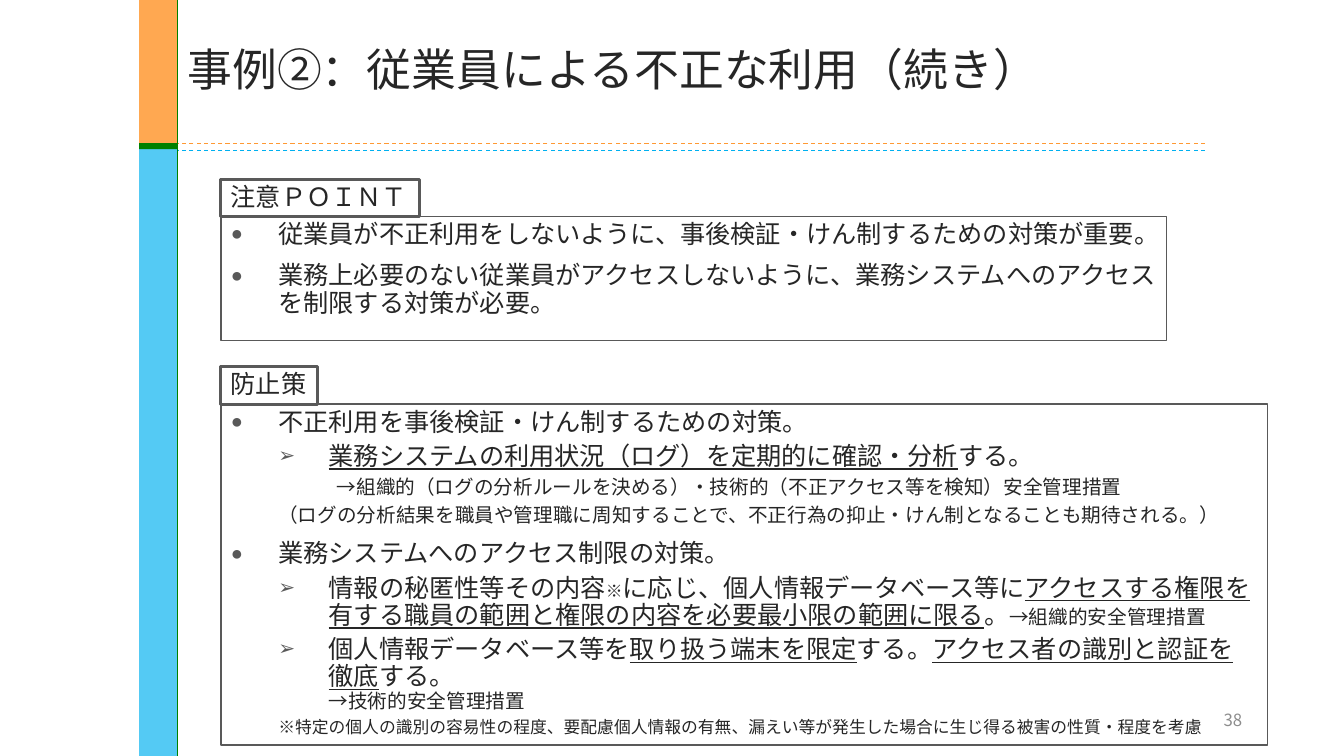
"""Builds the slide on preventing misuse of data by employees."""
from dataclasses import dataclass

from lxml.etree import SubElement
from pptx import Presentation
from pptx.dml.color import RGBColor
from pptx.enum.dml import MSO_LINE
from pptx.enum.shapes import MSO_CONNECTOR, MSO_SHAPE
from pptx.enum.text import MSO_ANCHOR, MSO_AUTO_SIZE, PP_ALIGN
from pptx.oxml.ns import qn
from pptx.util import Pt

PX = 9144
FONT = "Noto Sans CJK JP"
INK = RGBColor(0x26, 0x26, 0x26)
GREY = RGBColor(0x59, 0x59, 0x59)
PALE = RGBColor(0x8C, 0x8C, 0x8C)
BLUE = RGBColor(0x00, 0xB0, 0xF0)
ORANGE = RGBColor(0xFF, 0x99, 0x33)
GREEN = RGBColor(0x00, 0x80, 0x00)


@dataclass(frozen=True)
class Box:
    left: int
    top: int
    width: int
    height: int

    def emu(self) -> tuple:
        return tuple(v * PX for v in (self.left, self.top, self.width, self.height))


@dataclass(frozen=True)
class Bar:
    box: Box
    color: RGBColor
    opacity: int = 100


@dataclass(frozen=True)
class Rule:
    start: tuple
    end: tuple
    color: RGBColor
    width: float
    dash: bool = False


@dataclass(frozen=True)
class Span:
    text: str
    size: int = 18
    underline: bool = False
    new_line: bool = False


@dataclass(frozen=True)
class Item:
    spans: tuple
    level: int = 0
    bullet: str = ""
    margin: int = 47


@dataclass(frozen=True)
class Section:
    label: str
    label_box: Box
    body_box: Box
    items: tuple


def point(*spans: Span) -> Item:
    return Item(spans, 0, "●")


def measure(*spans: Span) -> Item:
    return Item(spans, 1, "➢", 97)


def note(text: str, size: int, margin: int = 47) -> Item:
    return Item((Span(text, size),), 1, "", margin)


BARS = (
    Bar(Box(138, 147, 38, 603), BLUE, 67),
    Bar(Box(138, 0, 38, 147), ORANGE, 85),
    Bar(Box(138, 142, 38, 6), GREEN),
)
RULES = (
    Rule((1195, 142), (176, 142), ORANGE, 0.75, True),
    Rule((1195, 149), (176, 149), BLUE, 0.75, True),
    Rule((176, 0), (176, 750), GREEN, 1),
)
SECTIONS = (
    Section("注意ＰＯＩＮＴ", Box(219, 178, 197, 37), Box(219, 215, 938, 123), (
        point(Span("従業員が不正利用をしないように、事後検証・けん制するための対策が重要。")),
        point(Span("業務上必要のない従業員がアクセスしないように、業務システムへのアクセスを制限する対策が必要。")),
    )),
    Section("防止策", Box(219, 364, 96, 37), Box(219, 401, 1038, 338), (
        point(Span("不正利用を事後検証・けん制するための対策。")),
        measure(Span("業務システムの利用状況（ログ）を定期的に確認・分析", underline=True),
                Span("する。")),
        note("→組織的（ログの分析ルールを決める）・技術的（不正アクセス等を検知）安全管理措置", 14, 105),
        note("（ログの分析結果を職員や管理職に周知することで、不正行為の抑止・けん制となることも期待される。）", 14),
        point(Span("業務システムへのアクセス制限の対策。")),
        measure(Span("情報の秘匿性等その内容"), Span("※", 12),
                Span("に応じ、個人情報データベース等に"),
                Span("アクセスする権限を有する職員の範囲と権限の内容を必要最小限の範囲に限る", underline=True),
                Span("。"), Span("→組織的安全管理措置", 14)),
        measure(Span("個人情報データベース等を"), Span("取り扱う端末を限定", underline=True),
                Span("する。"), Span("アクセス者の識別と認証を徹底", underline=True),
                Span("する。"), Span("→技術的安全管理措置", 14, new_line=True)),
        note("※特定の個人の識別の容易性の程度、要配慮個人情報の有無、漏えい等が発生した場合に生じ得る被害の性質・程度を考慮", 12),
    )),
)


def style_run(r, size: int, color: RGBColor = INK) -> None:
    r.font.size = Pt(size)
    r.font.name = FONT
    r.font.color.rgb = color
    SubElement(r.font._element, qn("a:ea"), typeface=FONT)


def place(sp, box: Box) -> None:
    sp.left, sp.top, sp.width, sp.height = box.emu()


def write_line(sp, text: str, size: int, color: RGBColor = INK):
    tf = sp.text_frame
    tf.text = text
    tf.vertical_anchor = MSO_ANCHOR.MIDDLE
    p = tf.paragraphs[0]
    p.alignment = PP_ALIGN.LEFT
    p.line_spacing = 0.9
    style_run(p.runs[0], size, color)
    return p


def outline(sp, width: float) -> None:
    sp.line.color.rgb = GREY
    sp.line.width = Pt(width)


def add_bar(shapes, bar: Bar) -> None:
    sp = shapes.add_shape(MSO_SHAPE.RECTANGLE, *bar.box.emu())
    sp.shadow.inherit = False
    sp.fill.solid()
    sp.fill.fore_color.rgb = bar.color
    sp.line.fill.background()
    if bar.opacity < 100:
        clr = sp._element.spPr.find(qn("a:solidFill"))[0]
        SubElement(clr, qn("a:alpha"), val=str(bar.opacity * 1000))


def add_rule(shapes, rule: Rule) -> None:
    ends = (v * PX for v in rule.start + rule.end)
    line = shapes.add_connector(MSO_CONNECTOR.STRAIGHT, *ends)
    line.line.color.rgb = rule.color
    line.line.width = Pt(rule.width)
    if rule.dash:
        line.line.dash_style = MSO_LINE.DASH
    SubElement(line._element.spPr, qn("a:effectLst"))


def write_item(p, item: Item) -> None:
    p.level = item.level
    p.line_spacing = 0.9
    p.space_before = Pt(5 if item.level else 10)
    pPr = p._p.get_or_add_pPr()
    pPr.set("marL", str(item.margin * PX))
    pPr.set("indent", str(-50 * PX if item.bullet else 0))
    if item.bullet:
        SubElement(SubElement(pPr, qn("a:buClr")), qn("a:srgbClr"), val=str(GREY))
        SubElement(pPr, qn("a:buSzPct"), val="80000")
        SubElement(pPr, qn("a:buFont"), typeface="Arial")
        SubElement(pPr, qn("a:buChar"), char=item.bullet)
    else:
        SubElement(pPr, qn("a:buNone"))
    for span in item.spans:
        if span.new_line:
            p.add_line_break()
        r = p.add_run()
        r.text = span.text
        style_run(r, span.size)
        if span.underline:
            r.font.underline = True


def add_section(shapes, body, section: Section) -> None:
    place(body, section.body_box)
    outline(body, 1)
    tf = body.text_frame
    tf.auto_size = MSO_AUTO_SIZE.NONE
    tf.vertical_anchor = MSO_ANCHOR.TOP
    for i, item in enumerate(section.items):
        write_item(tf.add_paragraph() if i else tf.paragraphs[0], item)
    label = shapes.add_textbox(*section.label_box.emu())
    outline(label, 2)
    write_line(label, section.label, 18).space_before = Pt(10)
    label.text_frame.word_wrap = False
    label.text_frame.auto_size = MSO_AUTO_SIZE.SHAPE_TO_FIT_TEXT


def main() -> None:
    prs = Presentation()
    prs.slide_width, prs.slide_height = 1333 * PX, 750 * PX
    s = prs.slides.add_slide(prs.slide_layouts.get_by_name("Two Content"))
    title, *bodies = s.placeholders
    place(title, Box(176, 0, 1019, 142))
    write_line(title, "事例②：従業員による不正な利用（続き）", 32)
    title.text_frame.auto_size = MSO_AUTO_SIZE.NONE
    for bar in BARS:
        add_bar(s.shapes, bar)
    for rule in RULES:
        add_rule(s.shapes, rule)
    for body, section in zip(bodies, SECTIONS):
        add_section(s.shapes, body, section)
    number = s.shapes.add_textbox(*Box(942, 695, 300, 40).emu())
    number.text_frame.word_wrap = True
    write_line(number, "38", 12, PALE).alignment = PP_ALIGN.RIGHT
    prs.save("out.pptx")


if __name__ == "__main__":
    main()
